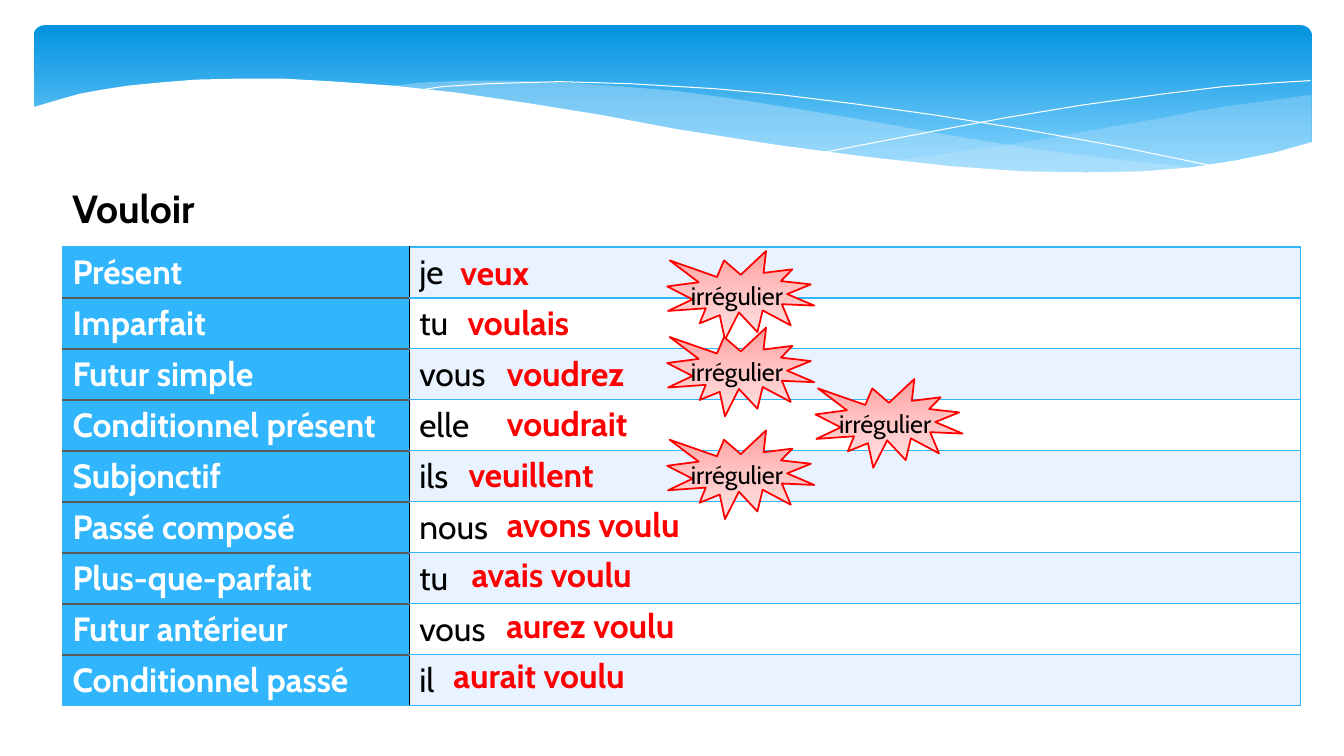
from copy import deepcopy
from dataclasses import dataclass

from pptx import Presentation
from pptx import util as u
from pptx.dml.color import RGBColor
from pptx.enum import shapes, text
from pptx.oxml import ns, parse_xml

Pt = u.Pt


@dataclass(frozen=True)
class Theme:
    """Colours, font and type sizes of the slide."""
    font: str = "Cabin"
    title: int = 28
    body: int = 24
    badge: int = 18
    black: str = "000000"
    white: str = "FFFFFF"
    red: str = "FF0000"
    blue: str = "31B6FD"
    band: str = "E8F3FF"
    rule: str = "595959"
    ribbon: str = "C6E7FC"
    sky: tuple = ((0, "0293E0"), (0.9, "83D3FE"))
    blush: tuple = ((0, "FFA0A0"), (0.5, "FFC5C5"), (1, "FFE3E3"))


TENSES = [
    ("Présent", "je", "veux", 321.8),
    ("Imparfait", "tu", "voulais", 326.9),
    ("Futur simple", "vous", "voudrez", 355),
    ("Conditionnel présent", "elle", "voudrait", 355),
    ("Subjonctif", "ils", "veuillent", 327.6),
    ("Passé composé", "nous", "avons voulu", 355),
    ("Plus-que-parfait", "tu", "avais voulu", 329.8),
    ("Futur antérieur", "vous", "aurez voulu", 354.6),
    ("Conditionnel passé", "il", "aurait voulu", 316.8),
]
BADGES = [(476.6, 179.3), (476.6, 234), (582.5, 270.7), (476.6, 307.4)]
LEFT, TOP, ROW = 44.6, 176.4, 36

RIGHT_RIBBON = [
    (936.7, 67.7), (910.8, 71.3), (883.4, 74.9), (855.4, 79.2), (825.8, 85),
    (772.6, 94.3), (723.6, 103), (677.5, 109.4), (635, 115.2), (676.8, 118.8),
    (715, 121.7), (749.5, 123.8), (781.2, 123.8), (810.7, 123.1), (837.4, 121.7),
    (861.1, 118.8), (884.2, 115.2), (905, 110.9), (936.7, 102.2)]
LONG_RIBBON = [
    (856.8, 120.2), (803.5, 114.5), (744.5, 107.3), (677.5, 96.5), (604.1, 83.5),
    (560.2, 76.3), (519.1, 69.8), (481.7, 64.8), (445.7, 61.9), (403.2, 59),
    (364.3, 57.6), (330.5, 57.6), (301, 59), (275, 61.9), (310.3, 64.8),
    (347.8, 69.8), (388.1, 76.3), (431.3, 83.5), (508.3, 97.2), (560.9, 105.1),
    (609.1, 112.3), (653, 117.4), (693.4, 121), (730.1, 123.1), (763.9, 124.6),
    (794.9, 124.6), (823, 123.1)]
FALLING_LINE = [
    (296.6, 64.8), (315.4, 61.9), (348.5, 59.8), (399.6, 58.3), (450, 59.8),
    (511.2, 63.4), (558, 67.7), (610.6, 74.2), (667.4, 82.1), (730.1, 92.2),
    (797.8, 104.4), (871.2, 119.5)]
RISING_LINE = [
    (589, 108.7), (626.4, 101.5), (667.4, 93.6), (717.8, 84.2), (774, 74.9),
    (831.6, 67), (873.4, 61.9), (912.2, 59), (936, 57.6)]
WHITE_WAVE = [
    (938.2, 101.2), (911.5, 108.7), (883.4, 114.5), (851.8, 119.5), (816.5, 122.4),
    (776.2, 123.1), (730.8, 122.4), (679.7, 118.8), (621.4, 112.3), (555.8, 103.7),
    (483.1, 92.2), (429.1, 82.1), (375.1, 73.4), (326.2, 66.2), (280.8, 61.2),
    (239.8, 58.3), (203, 56.2), (169.2, 56.2), (139.7, 56.9), (113.8, 59),
    (91.4, 61.2), (72.7, 64.1), (56.9, 67), (43.9, 70.6), (34.6, 73.4),
    (22.3, 77), (22.3, 161.3), (938.2, 161.3)]


def write(tf, words, *, size, color, font, bold=False):
    """Put one formatted run into a text frame."""
    p = tf.paragraphs[0]
    r = p.add_run()
    r.text = words
    r.font.name, r.font.size, r.font.bold = font, Pt(size), bold
    r.font.color.rgb = RGBColor.from_string(color)


class Deck:
    """Draws styled elements on the current slide."""

    def __init__(self, prs, theme):
        self.theme = theme
        self.slide = prs.slides.add_slide(prs.slide_layouts[6])

    def label(self, words, x, y, w, h, **fmt):
        """Add a wrapped text box."""
        tf = self.slide.shapes.add_textbox(Pt(x), Pt(y), Pt(w), Pt(h)).text_frame
        tf.word_wrap = True
        tf.auto_size = text.MSO_AUTO_SIZE.SHAPE_TO_FIT_TEXT
        write(tf, words, font=self.theme.font, **fmt)

    def shape(self, kind, x, y, w, h, stops, line=None):
        """Add a preset shape filled from top to bottom with a gradient."""
        sp = self.slide.shapes.add_shape(kind, Pt(x), Pt(y), Pt(w), Pt(h))
        sp.shadow.inherit = False
        sp.fill.gradient()
        sp.fill.gradient_angle = 270
        gs_list = sp.element.spPr.find(".//" + ns.qn("a:gsLst"))
        while len(gs_list) < len(stops):
            gs_list.append(deepcopy(gs_list[-1]))
        for stop, (position, color) in zip(sp.fill.gradient_stops, stops):
            stop.position = position
            stop.color.rgb = RGBColor.from_string(color)
        if line:
            sp.line.color.rgb = RGBColor.from_string(line)
            sp.line.width = Pt(1.25)
        else:
            sp.line.fill.background()
        return sp

    def curve(self, points, fill=None, opacity=100):
        """Add a filled outline, or an open white hairline without a fill."""
        start, *rest = [(Pt(x), Pt(y)) for x, y in points]
        builder = self.slide.shapes.build_freeform(*start)
        builder.add_line_segments(rest, close=fill is not None)
        sp = builder.convert_to_shape()
        sp.shadow.inherit = False
        if fill is None:
            sp.fill.background()
            sp.line.color.rgb = RGBColor.from_string(self.theme.white)
            sp.line.width = Pt(0)
            return
        sp.line.fill.background()
        sp.fill.solid()
        sp.fill.fore_color.rgb = RGBColor.from_string(fill)
        clr = sp.element.spPr.find(".//" + ns.qn("a:srgbClr"))
        clr.append(parse_xml(f'<a:alpha {ns.nsdecls("a")} val="{opacity * 1000}"/>'))

    def cell(self, cell, words, fill, borders, **fmt):
        """Fill, border and write one table cell."""
        cell.fill.solid()
        cell.fill.fore_color.rgb = RGBColor.from_string(fill)
        for i, (side, (color, width)) in enumerate(zip("LRTB", borders)):
            cell._tc.tcPr.insert(i, parse_xml(
                f'<a:ln{side} {ns.nsdecls("a")} w="{Pt(width)}"><a:solidFill>'
                f'<a:srgbClr val="{color}"/></a:solidFill></a:ln{side}>'))
        write(cell.text_frame, words, size=self.theme.body, font=self.theme.font, **fmt)

    def table(self, rows, x, y, widths, row_height):
        """Add the table of tenses and pronouns."""
        t = self.theme
        table = self.slide.shapes.add_table(
            len(rows), len(widths), Pt(x), Pt(y), Pt(sum(widths)),
            Pt(row_height * len(rows))).table
        table.first_row = table.horz_banding = False
        for column, width in zip(table.columns, widths):
            column.width = Pt(width)
        thin, dark, divider = (t.blue, 1), (t.rule, 1.5), (t.black, 1)
        for i, (tense, pronoun, *_) in enumerate(rows):
            table.rows[i].height = Pt(row_height)
            above = dark if i else thin
            below = dark if i < len(rows) - 1 else thin
            self.cell(table.cell(i, 0), tense, t.blue, (thin, divider, above, below),
                      color=t.white, bold=True)
            self.cell(table.cell(i, 1), pronoun, t.white if i % 2 else t.band,
                      (divider, thin, thin, thin), color=t.black)

    def badge(self, words, x, y):
        """Add a red burst with its caption."""
        t = self.theme
        self.shape(shapes.MSO_SHAPE.EXPLOSION1, x, y, 105.1, 63.4, t.blush, t.red)
        self.label(words, x + 9.8, y + 17.3, 85.7, 28.8, size=t.badge, color=t.black)


def main():
    """Build the conjugation slide."""
    prs = Presentation()
    prs.slide_width, prs.slide_height = Pt(960), Pt(540)
    t = Theme()
    deck = Deck(prs, t)
    header = deck.shape(shapes.MSO_SHAPE.ROUNDED_RECTANGLE, 24, 18, 913, 112.3, t.sky)
    header.adjustments[0] = 0.07
    deck.curve(RIGHT_RIBBON, t.ribbon, 29)
    deck.curve(LONG_RIBBON, t.ribbon, 40)
    deck.curve(FALLING_LINE)
    deck.curve(RISING_LINE)
    deck.curve(WHITE_WAVE, t.white)
    deck.table(TENSES, LEFT, TOP, (247.7, 636.5), ROW)
    deck.label("Vouloir", LEFT, 128.2, 322.6, 41, size=t.title, color=t.black, bold=True)
    for i, (*_, verb, x) in enumerate(TENSES):
        deck.label(verb, x, TOP + i * ROW, 175, ROW, size=t.body, color=t.red, bold=True)
    for x, y in BADGES:
        deck.badge("irrégulier", x, y)
    prs.save("out.pptx")


if __name__ == "__main__":
    main()
